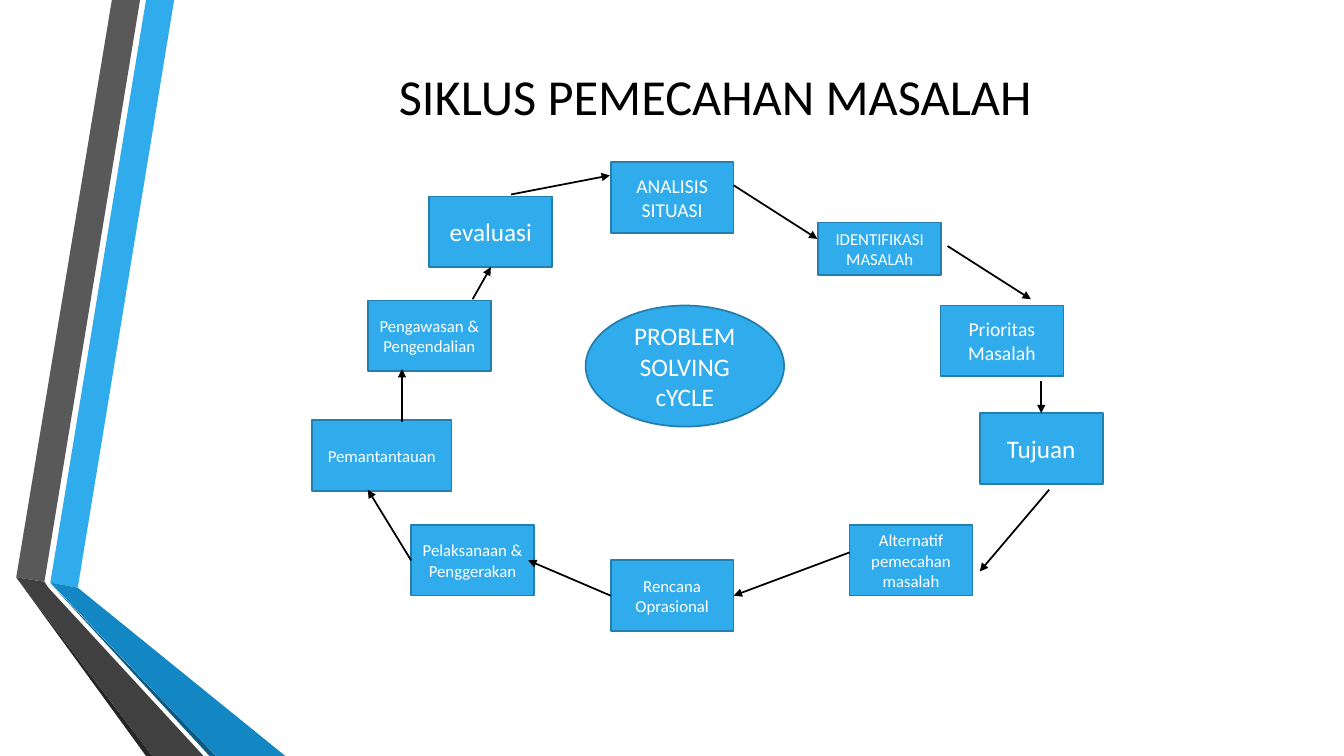
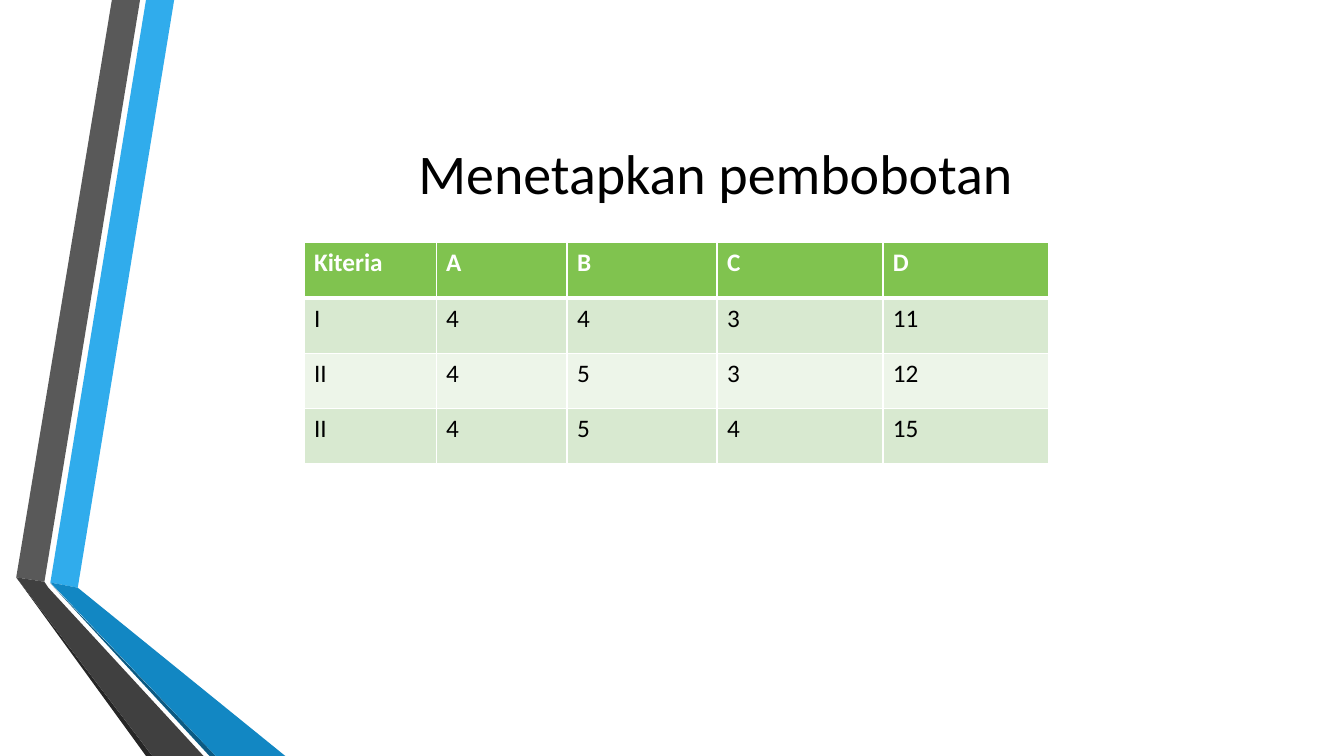
from lxml import etree
from pptx import Presentation
from pptx.dml.color import RGBColor
from pptx.enum.shapes import MSO_CONNECTOR, MSO_SHAPE
from pptx.enum.text import MSO_ANCHOR, PP_ALIGN
from pptx.oxml.ns import qn
from pptx.util import Cm, Pt

STRAIGHT = MSO_CONNECTOR.STRAIGHT
RECT, OVAL = MSO_SHAPE.RECTANGLE, MSO_SHAPE.FLOWCHART_CONNECTOR
MIDDLE, CENTER = MSO_ANCHOR.MIDDLE, PP_ALIGN.CENTER
TOP, LEFT, BOTTOM, RIGHT = range(4)

FONT = "Calibri"
BLACK = RGBColor(0x00, 0x00, 0x00)
WHITE = RGBColor(0xFF, 0xFF, 0xFF)
BLUE = RGBColor(0x30, 0xAC, 0xEC)
BLUE_LINE = RGBColor(0x24, 0x7F, 0xAF)
BLUE_MID = RGBColor(0x12, 0x87, 0xC3)
BLUE_DARK = RGBColor(0x0C, 0x5A, 0x82)
GRAY = RGBColor(0x59, 0x59, 0x59)
GRAY_MID = RGBColor(0x40, 0x40, 0x40)
GRAY_DARK = RGBColor(0x26, 0x26, 0x26)
GREEN = RGBColor(0x80, 0xC3, 0x4F)
GREEN_LIGHT = RGBColor(0xD8, 0xE9, 0xD0)
GREEN_PALE = RGBColor(0xED, 0xF5, 0xE9)

# Folded ribbons at the left edge: colour and corner points in cm
RIBBONS = [
    (BLUE, [(1.27, 14.68), (1.96, 14.81), (4.39, 0), (3.68, 0)]),
    (GRAY, [(3.53, 0), (2.82, 0), (0.41, 14.55), (1.12, 14.66)]),
    (GRAY_DARK, [(0.41, 14.55), (3.68, 19.05), (3.84, 19.05)]),
    (BLUE_DARK, [(1.27, 14.7), (5.28, 19.05), (5.44, 19.05)]),
    (BLUE_MID, [(1.27, 14.68), (5.44, 19.05), (7.19, 19.05), (1.96, 14.81)]),
    (GRAY_MID, [(5.13, 19.05), (1.22, 14.81), (1.12, 14.66), (0.41, 14.55),
                (3.84, 19.05)]),
]


class Deck:
    """Holds the presentation style and the current slide."""

    def __init__(self):
        self.prs = Presentation()
        self.prs.slide_width, self.prs.slide_height = Cm(33.87), Cm(19.05)
        self.s = None

    def new_slide(self, title, size, height):
        self.s = self.prs.slides.add_slide(self.prs.slide_layouts[6])
        for color, points in RIBBONS:
            self.polygon(points, color)
        sp = self.s.shapes.add_textbox(Cm(4.11), Cm(1.9), Cm(27.84), Cm(height))
        self.text(sp.text_frame, title, size, BLACK)

    def text(self, tf, text, size, color, align=CENTER, anchor=MIDDLE, bold=False):
        tf.word_wrap = True
        tf.vertical_anchor = anchor
        p = tf.paragraphs[0]
        p.alignment = align
        r = p.add_run()
        r.text = text
        r.font.name, r.font.size, r.font.bold = FONT, Pt(size), bold
        r.font.color.rgb = color

    def polygon(self, points, color):
        start, *rest = [(Cm(x), Cm(y)) for x, y in points]
        builder = self.s.shapes.build_freeform(*start)
        builder.add_line_segments(rest, close=True)
        sp = builder.convert_to_shape()
        sp.shadow.inherit = False
        sp.fill.solid()
        sp.fill.fore_color.rgb = color
        sp.line.fill.background()

    def box(self, text, size, x, y, w=3.1, h=1.78, kind=RECT):
        sp = self.s.shapes.add_shape(kind, Cm(x), Cm(y), Cm(w), Cm(h))
        sp.shadow.inherit = False
        sp.fill.solid()
        sp.fill.fore_color.rgb = BLUE
        sp.line.color.rgb = BLUE_LINE
        sp.line.width = Pt(1.25)
        self.text(sp.text_frame, text, size, WHITE)
        return sp

    def arrow(self, start, end):
        """Each end is an (x, y) point in cm or a (shape, side) pair."""
        ends = (start, end)
        joined = [not isinstance(e[0], (int, float)) for e in ends]
        points = [(0, 0) if j else (Cm(e[0]), Cm(e[1])) for e, j in zip(ends, joined)]
        c = self.s.shapes.add_connector(STRAIGHT, *points[0], *points[1])
        if joined[0]:
            c.begin_connect(*start)
        if joined[1]:
            c.end_connect(*end)
        c.line.color.rgb = BLACK
        c.line.width = Pt(1.25)
        etree.SubElement(c.line._get_or_add_ln(), qn("a:tailEnd"), type="triangle")
        etree.SubElement(c._element.spPr, qn("a:effectLst"))

    def table(self, x, y, widths, row_height, rows):
        shape = self.s.shapes.add_table(len(rows), len(widths), Cm(x), Cm(y),
                                        Cm(sum(widths)), Cm(row_height * len(rows)))
        table = shape.table
        for column, width in zip(table.columns, widths):
            column.width = Cm(width)
        for i, values in enumerate(rows):
            table.rows[i].height = Cm(row_height)
            header = i == 0
            fill = GREEN if header else GREEN_LIGHT if i % 2 else GREEN_PALE
            for j, value in enumerate(values):
                cell = table.cell(i, j)
                cell.fill.solid()
                cell.fill.fore_color.rgb = fill
                self.text(cell.text_frame, value, 18, WHITE if header else BLACK,
                          align=PP_ALIGN.LEFT, anchor=None, bold=header)
                self.borders(cell, top=3 if i == 1 else 1, bottom=3 if header else 1)

    def borders(self, cell, top, bottom):
        tc_pr = cell._tc.get_or_add_tcPr()
        sides = (("a:lnL", 1), ("a:lnR", 1), ("a:lnT", top), ("a:lnB", bottom))
        for n, (tag, width) in enumerate(sides):
            ln = etree.Element(qn(tag), w=str(Pt(width)))
            fill = etree.SubElement(ln, qn("a:solidFill"))
            etree.SubElement(fill, qn("a:srgbClr"), val=str(WHITE))
            tc_pr.insert(n, ln)


def cycle_slide(deck):
    deck.new_slide("SIKLUS PEMECAHAN MASALAH", 36, 1.02)

    # Centre and the steps around it
    deck.box("PROBLEM SOLVING cYCLE", 18, 14.76, 7.7, 5, 3.05, OVAL)
    deck.box("ANALISIS SITUASI", 14, 15.39, 4.09)
    deck.box("IDENTIFIKASI MASALAh", 12, 20.62, 5.61, h=1.32)
    deck.box("Prioritas Masalah", 14, 23.7, 7.7)
    goal = deck.box("Tujuan", 18, 24.69, 10.41)
    deck.box("Alternatif pemecahan masalah", 12, 21.41, 13.23)
    plan = deck.box("Rencana Oprasional", 12, 15.39, 14.12)
    action = deck.box("Pelaksanaan & Penggerakan", 12, 10.36, 13.23)
    deck.box("Pemantantauan", 12, 7.87, 10.59, w=3.51)
    deck.box("Pengawasan & Pengendalian", 12, 9.27, 7.57)
    evaluation = deck.box("evaluasi", 18, 10.82, 4.95)

    # Arrows, clockwise from the top
    for start, end in [
        ((18.49, 4.67), (20.6, 6.02)),
        ((23.88, 6.2), (25.98, 7.54)),
        ((26.24, 9.6), (goal, TOP)),
        ((26.44, 12.34), (24.69, 14.4)),
        ((21.41, 13.92), (plan, RIGHT)),
        ((plan, LEFT), (13.31, 14.12)),
        ((action, LEFT), (9.27, 12.34)),
        ((10.13, 10.64), (10.13, 9.3)),
        ((11.91, 7.54), (evaluation, BOTTOM)),
        ((12.88, 4.9), (15.37, 4.42)),
    ]:
        deck.arrow(start, end)


def weighting_slide(deck):
    deck.new_slide("Menetapkan pembobotan", 40, 4.88)
    deck.table(7.66, 6.12, [3.33, 3.3, 3.78, 4.18, 4.18], 1.39, [
        ["Kiteria", "A", "B", "C", "D"],
        ["I", "4", "4", "3", "11"],
        ["II", "4", "5", "3", "12"],
        ["II", "4", "5", "4", "15"],
    ])


def main():
    deck = Deck()
    cycle_slide(deck)
    weighting_slide(deck)
    deck.prs.save("out.pptx")


if __name__ == "__main__":
    main()
